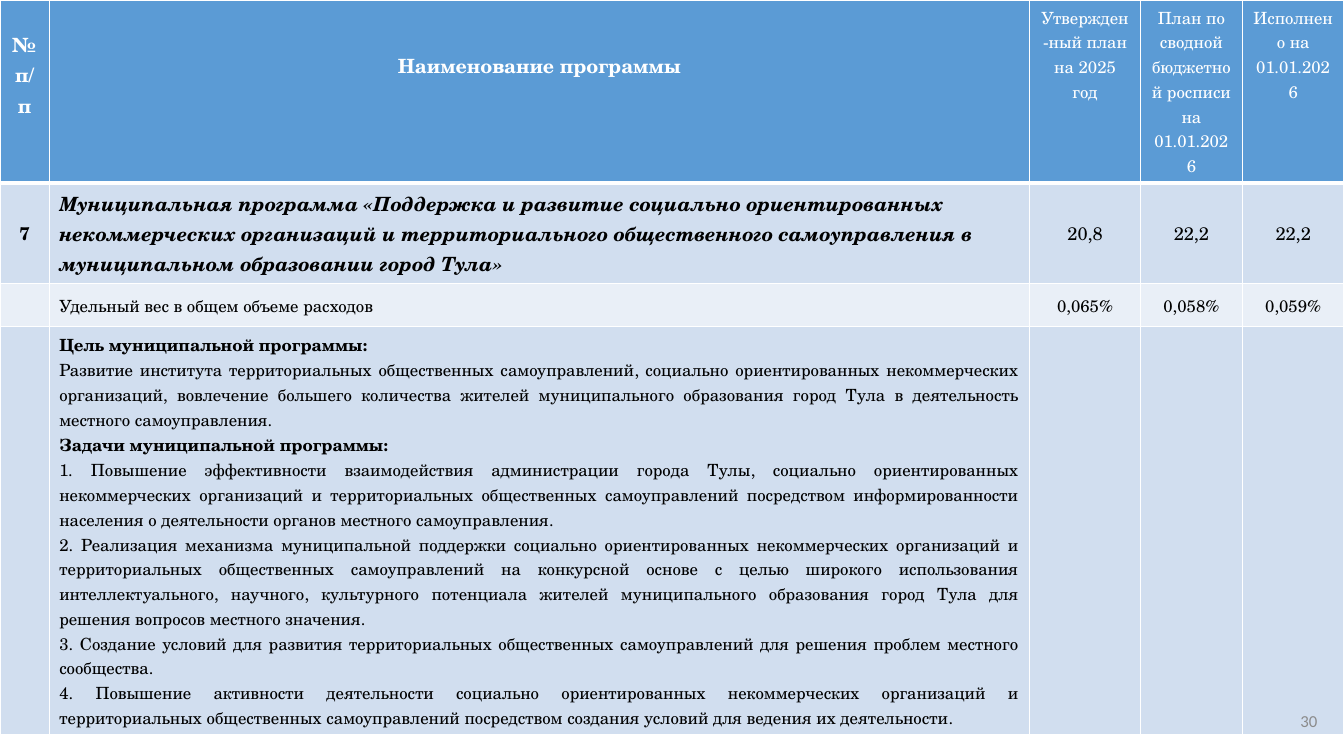
from lxml import etree
from pptx import Presentation
from pptx.dml.color import RGBColor
from pptx.enum.text import MSO_ANCHOR, PP_ALIGN
from pptx.oxml.ns import qn
from pptx.util import Cm, Pt

TOP, MID = MSO_ANCHOR.TOP, MSO_ANCHOR.MIDDLE
LEFT, RIGHT = PP_ALIGN.LEFT, PP_ALIGN.RIGHT
CENTER, JUST = PP_ALIGN.CENTER, PP_ALIGN.JUSTIFY

# Content: each cell is a list of (text, style) paragraphs
GOALS = [
    ("Цель муниципальной программы: ", "label"),
    ("Развитие института территориальных общественных самоуправлений, социально ориентированных "
     "некоммерческих организаций, вовлечение большего количества жителей муниципального "
     "образования город Тула в деятельность местного самоуправления.", "body"),
    ("Задачи муниципальной программы:", "label"),
    ("1. Повышение эффективности взаимодействия администрации города Тулы, социально "
     "ориентированных некоммерческих организаций и территориальных общественных самоуправлений "
     "посредством информированности населения о деятельности органов местного самоуправления.",
     "body"),
    ("2. Реализация механизма муниципальной поддержки социально ориентированных некоммерческих "
     "организаций и территориальных общественных самоуправлений на конкурсной основе с целью "
     "широкого использования интеллектуального, научного, культурного потенциала жителей "
     "муниципального образования город Тула для решения вопросов местного значения.", "body"),
    ("3. Создание условий для развития территориальных общественных самоуправлений для решения "
     "проблем местного сообщества.", "body"),
    ("4. Повышение активности деятельности социально ориентированных некоммерческих организаций "
     "и территориальных общественных самоуправлений посредством создания условий для ведения "
     "их деятельности. ", "body"),
]
PROGRAM = ("Муниципальная программа «Поддержка и развитие социально ориентированных "
           "некоммерческих организаций и территориального общественного самоуправления "
           "в муниципальном образовании город Тула»")
ROWS = [
    [[("№ п/п", "head")], [("Наименование программы", "head")],
     [("Утвержден-ный план на 2025 год", "plan")],
     [("План по сводной бюджетной росписи на 01.01.2026", "plan")],
     [("Исполнено на 01.01.2026", "plan")]],
    [[("7", "num")], [(PROGRAM, "title")],
     [("20,8", "sum")], [("22,2", "sum")], [("22,2", "sum")]],
    [[], [("Удельный вес в общем объеме расходов", "body")],
     [("0,065%", "share")], [("0,058%", "share")], [("0,059%", "share")]],
    [[], GOALS, [], [], []],
]
PAGE = "30"

# Format: size, bold, italic, colour, alignment
SERIF = "TeX Gyre Schola"
STYLES = {
    "head": (14, True, False, "FFFFFF", CENTER),
    "plan": (12, False, False, "FFFFFF", CENTER),
    "num": (13, True, False, "000000", CENTER),
    "title": (14, True, True, "000000", LEFT),
    "sum": (13, False, False, "000000", CENTER),
    "share": (12, False, False, "000000", CENTER),
    "label": (12, True, False, "000000", JUST),
    "body": (12, False, False, "000000", JUST),
    "page": (12, False, False, "8B8B8B", RIGHT),
}
WIDTHS = [1.24, 24.71, 2.79, 2.57, 2.56]
HEIGHTS = [4.01, 2.18, 1.09, 9.86]
FILLS = ["5B9BD5", "D1DEEF", "E9EFF7", "D1DEEF"]
DROPS = {0: 0.74, 1: 1.28}  # top margin of the header cells
THIN, THICK = 0.96, 3


def color(text):
    return RGBColor.from_string(text)


def write(frame, paras, face=SERIF):
    for i, (text, style) in enumerate(paras):
        para = frame.paragraphs[0] if i == 0 else frame.add_paragraph()
        size, bold, italic, tint, para.alignment = STYLES[style]
        run = para.add_run()
        run.text = text
        look = {"name": face, "size": Pt(size), "bold": bold, "italic": italic}
        for key, value in look.items():
            setattr(run.font, key, value)
        run.font.color.rgb = color(tint)


def edge(cell, sides):
    props = cell._tc.get_or_add_tcPr()
    for i, (side, width) in enumerate(sides.items()):
        line = etree.Element(qn("a:ln" + side), w=str(Pt(width)))
        fill = etree.SubElement(line, qn("a:solidFill"))
        etree.SubElement(fill, qn("a:srgbClr"), val="FFFFFF")
        props.insert(i, line)


deck = Presentation()
deck.slide_width, deck.slide_height = Cm(33.87), Cm(19.05)
slide = deck.slides.add_slide(deck.slide_layouts[6])

# Programme table
table = slide.shapes.add_table(len(ROWS), len(WIDTHS), 0, 0,
                               Cm(sum(WIDTHS)), Cm(sum(HEIGHTS))).table
for col, width in zip(table.columns, WIDTHS):
    col.width = Cm(width)
for r, row in enumerate(ROWS):
    table.rows[r].height = Cm(HEIGHTS[r])
    for c, paras in enumerate(row):
        cell = table.cell(r, c)
        cell.fill.solid()
        cell.fill.fore_color.rgb = color(FILLS[r])
        cell.vertical_anchor = MID if r else TOP
        if r == 0 and c in DROPS:
            cell.margin_top = Cm(DROPS[c])
        edge(cell, {"L": THIN, "R": THIN,
                    "T": THICK if r == 1 else THIN,
                    "B": THICK if r == 0 else THIN})
        write(cell.text_frame, paras)

# Page number
box = slide.shapes.add_textbox(Cm(23.92), Cm(17.65), Cm(9.53), Cm(1.01)).text_frame
box.word_wrap = True
box.vertical_anchor = MID
write(box, [(PAGE, "page")], "Calibri")

deck.save("out.pptx")
